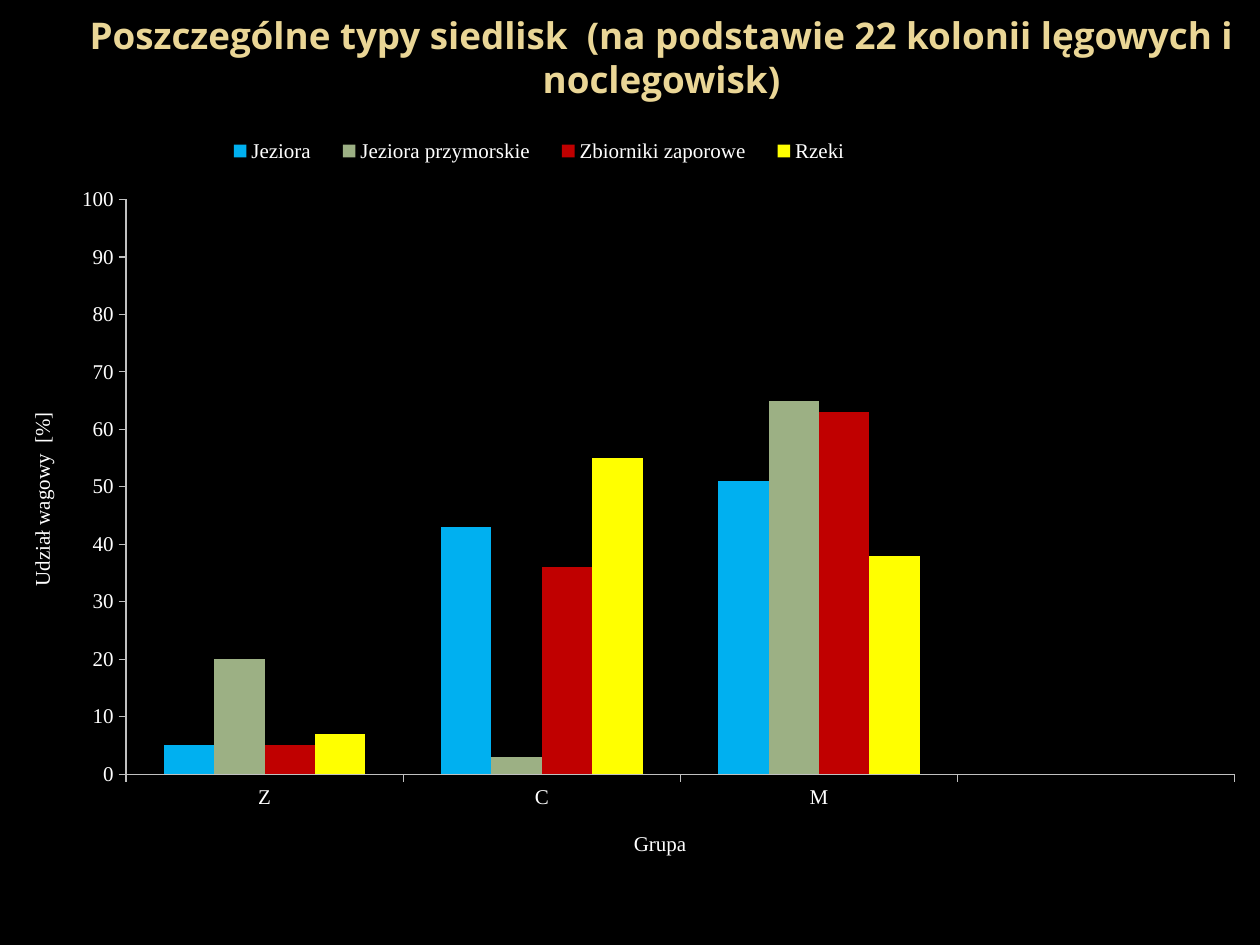
from lxml.etree import SubElement
from pptx import Presentation
from pptx.chart.data import CategoryChartData as ChartData
from pptx.dml.color import RGBColor
from pptx.enum.chart import XL_CHART_TYPE as ChartType
from pptx.enum.chart import XL_LEGEND_POSITION as LegendPosition
from pptx.enum.chart import XL_TICK_MARK as TickMark
from pptx.enum.text import MSO_ANCHOR as Anchor
from pptx.enum.text import MSO_AUTO_SIZE as AutoSize
from pptx.enum.text import PP_ALIGN as Align
from pptx.oxml.ns import qn
from pptx.util import Inches, Pt

BLACK = RGBColor(0x00, 0x00, 0x00)
WHITE = RGBColor(0xFF, 0xFF, 0xFF)
GOLD = RGBColor(0xEA, 0xD6, 0x96)
AXIS_GREY = RGBColor(0xC0, 0xC0, 0xC0)
BLUE = RGBColor(0x00, 0xB0, 0xF0)
SAGE = RGBColor(0x9C, 0xB0, 0x84)
RED = RGBColor(0xC0, 0x00, 0x00)
YELLOW = RGBColor(0xFF, 0xFF, 0x00)

SLIDE_WIDTH, SLIDE_HEIGHT = Inches(10), Inches(7.5)
GROUPS = ["Z", "C", "M", ""]
HABITATS = [
    ("Jeziora ", (5, 43, 51, None), BLUE),
    ("Jeziora przymorskie ", (20, 3, 65, None), SAGE),
    ("Zbiorniki zaporowe ", (5, 36, 63, None), RED),
    ("Rzeki ", (7, 55, 38, None), YELLOW),
]


def box_of(left, top, width, height):
    """Turn shares of the slide's size into a box in whole EMU."""
    return (int(left * SLIDE_WIDTH), int(top * SLIDE_HEIGHT),
            int(width * SLIDE_WIDTH), int(height * SLIDE_HEIGHT))


def format_font(font, *, size=12, face="Times New Roman", color=WHITE, bold=False):
    """Set the face, size, weight and colour of a font."""
    font.size, font.name, font.bold = Pt(size), face, bold
    font.color.rgb = color


def write_text(frame, text, *, align=Align.CENTER, **style):
    """Write one formatted paragraph into a text frame."""
    paragraph = frame.paragraphs[0]
    paragraph.alignment = align
    run = paragraph.add_run()
    run.text = text
    format_font(run.font, **style)


def place_part(part, index, inner=False, **shares):
    """Give a chart part a manual layout in shares of the chart's size."""
    for old in part.findall(qn("c:layout")):
        part.remove(old)
    layout = part.makeelement(qn("c:layout"), {})
    part.insert(index, layout)
    manual = SubElement(layout, qn("c:manualLayout"))
    if inner:
        SubElement(manual, qn("c:layoutTarget"), val="inner")
    for side in "xy":
        SubElement(manual, qn(f"c:{side}Mode"), val="edge")
    for side, share in shares.items():
        SubElement(manual, qn(f"c:{side}"), val=str(share))


def format_axis(axis, title, **position):
    """Style an axis and place its title."""
    axis.has_major_gridlines = False
    axis.major_tick_mark, axis.minor_tick_mark = TickMark.OUTSIDE, TickMark.NONE
    axis.format.line.color.rgb = AXIS_GREY
    axis.format.line.width = Pt(0.75)
    format_font(axis.tick_labels.font)
    write_text(axis.axis_title.text_frame, title)
    place_part(axis.axis_title._element, 1, **position)


def add_title(slide, box):
    """Place the slide title in its box."""
    title = slide.shapes.title
    title.left, title.top, title.width, title.height = box
    frame = title.text_frame
    frame.word_wrap = True
    frame.auto_size = AutoSize.NONE
    frame.vertical_anchor = Anchor.MIDDLE
    write_text(frame, "Poszczególne typy siedlisk  (na podstawie 22 kolonii "
               "lęgowych i noclegowisk)",
               size=21, face="Open Sans", color=GOLD, bold=True)


def add_habitat_chart(slide, box):
    """Draw the clustered columns of weight share by habitat."""
    data = ChartData()
    data.categories = GROUPS
    for name, values, _ in HABITATS:
        data.add_series(name, values)
    chart = slide.shapes.add_chart(ChartType.COLUMN_CLUSTERED, *box, data).chart
    chart.has_title = False
    format_font(chart.font)

    plot = chart.plots[0]
    plot.gap_width, plot.overlap, plot.vary_by_categories = 150, 0, False
    for series, (_, _, color) in zip(plot.series, HABITATS):
        series.format.fill.solid()
        series.format.fill.fore_color.rgb = color
        series.invert_if_negative = False

    format_axis(chart.category_axis, "Grupa ", x=0.5, y=0.93)
    shares = chart.value_axis
    format_axis(shares, "Udział wagowy  [%]", x=0.02, y=0.37)
    shares.minimum_scale, shares.maximum_scale, shares.major_unit = 0, 100, 10
    shares.tick_labels.number_format = "0"
    shares.tick_labels.number_format_is_linked = False

    chart.has_legend = True
    chart.legend.position = LegendPosition.TOP
    chart.legend.include_in_layout = False
    format_font(chart.legend.font)
    place_part(chart.legend._element, 1, x=0.17, y=0, w=0.52, h=0.05)
    place_part(chart._chartSpace.chart.plotArea, 0, inner=True,
               x=0.1, y=0.09, w=0.88, h=0.77)


def main():
    """Build and save the presentation."""
    deck = Presentation()
    deck.slide_width, deck.slide_height = SLIDE_WIDTH, SLIDE_HEIGHT
    slide = deck.slides.add_slide(deck.slide_layouts[5])
    slide.background.fill.solid()
    slide.background.fill.fore_color.rgb = BLACK
    add_title(slide, box_of(0.05, 0, 0.95, 0.12))
    add_habitat_chart(slide, box_of(0, 0.14, 1, 0.79))
    deck.save("out.pptx")


if __name__ == "__main__":
    main()
